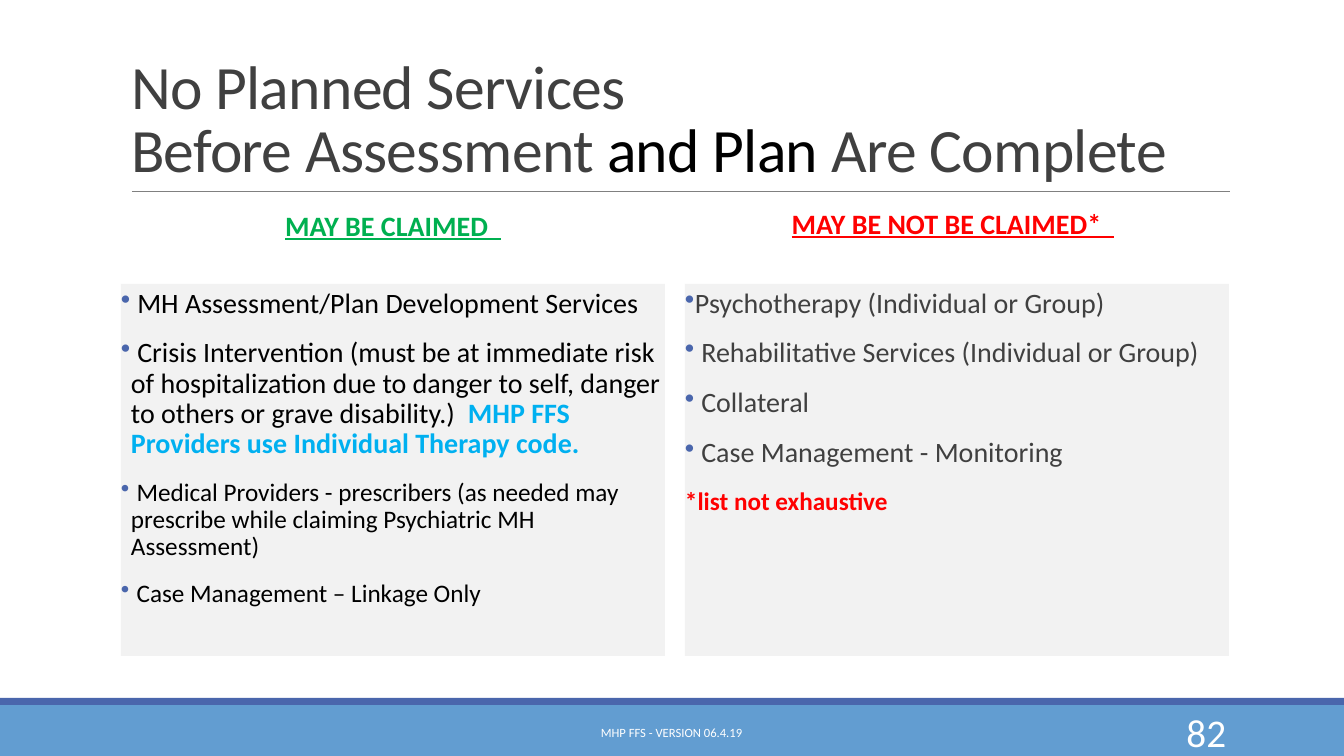
"""Build the slide on services that may be claimed before assessment and plan."""
import pptx
import pptx.dml.color
import pptx.enum.shapes
import pptx.enum.text
import pptx.oxml.ns
import pptx.util
from lxml import etree

ALIGN = pptx.enum.text.PP_ALIGN
ANCHOR = pptx.enum.text.MSO_ANCHOR
EMU_PER_PX = 914400 / 100.8


def px(length):
    """Turn whole pixels into EMU."""
    return pptx.util.Emu(round(length * EMU_PER_PX))


def color(value):
    """Turn a hex string into a colour."""
    return pptx.dml.color.RGBColor.from_string(value)


def add_text(paragraph, text, size=20, fill="000000", bold=False, underline=False, spacing=None):
    """Add formatted text to a paragraph, breaking lines at newlines."""
    for index, line in enumerate(text.split("\n")):
        if index:
            paragraph.add_line_break()
        run = paragraph.add_run()
        run.text = line
        run.font.name = "Calibri"
        run.font.size = pptx.util.Pt(size)
        run.font.color.rgb = color(fill)
        run.font.bold = bold
        run.font.underline = underline
        if spacing is not None:
            run.font._element.set("spc", str(spacing))


class SlideBuilder:
    """Hold the style and the current slide."""

    accent = "4A66AC"
    band = "629DD1"
    panel = "F2F2F2"
    muted = "404040"

    def __init__(self, presentation):
        """Add a title-only slide."""
        self.slide = presentation.slides.add_slide(presentation.slide_layouts[5])

    def rectangle(self, left, top, width, height, fill):
        """Add a plain filled rectangle."""
        shape = self.slide.shapes.add_shape(
            pptx.enum.shapes.MSO_SHAPE.RECTANGLE, px(left), px(top), px(width), px(height))
        shape.shadow.inherit = False
        shape.fill.solid()
        shape.fill.fore_color.rgb = color(fill)
        shape.line.fill.background()
        return shape

    def rule(self, left, right, top):
        """Add a thin horizontal line."""
        line = self.slide.shapes.add_connector(
            pptx.enum.shapes.MSO_CONNECTOR.STRAIGHT, px(left), px(top), px(right), px(top))
        line.line.color.rgb = color("808080")
        line.line.width = pptx.util.Pt(0.5)
        etree.SubElement(line._element.spPr, pptx.oxml.ns.qn("a:effectLst"))

    def title(self, left, top, width, height, parts):
        """Place the title and fill it with coloured parts."""
        title = self.slide.shapes.title
        title.left, title.top, title.width, title.height = map(px, (left, top, width, height))
        frame = title.text_frame
        frame.auto_size = pptx.enum.text.MSO_AUTO_SIZE.NONE
        frame.vertical_anchor = ANCHOR.BOTTOM
        paragraph = frame.paragraphs[0]
        paragraph.alignment = ALIGN.LEFT
        paragraph.line_spacing = 0.85
        for text, fill in parts:
            add_text(paragraph, text, size=44, fill=fill, spacing=-50)

    def label(self, left, top, width, height, text, align=ALIGN.CENTER,
              anchor=ANCHOR.MIDDLE, inset=5, line_spacing=1.0, **text_format):
        """Add a one-line text box."""
        frame = self.slide.shapes.add_textbox(px(left), px(top), px(width), px(height)).text_frame
        frame.word_wrap = True
        frame.vertical_anchor = anchor
        frame.margin_top = px(inset)
        paragraph = frame.paragraphs[0]
        paragraph.alignment = align
        paragraph.line_spacing = line_spacing
        add_text(paragraph, text, **text_format)

    def heading(self, left, top, text, fill):
        """Add an underlined column heading."""
        self.label(left, top, 544, 82, text, anchor=ANCHOR.TOP, inset=8, line_spacing=0.9,
                   fill=fill, bold=True, underline=True)

    def bullet(self, paragraph):
        """Give a paragraph a hanging accent bullet."""
        properties = paragraph._p.get_or_add_pPr()
        properties.set("marL", str(px(10)))
        properties.set("indent", str(px(-10)))
        bullet_color = etree.SubElement(properties, pptx.oxml.ns.qn("a:buClr"))
        etree.SubElement(bullet_color, pptx.oxml.ns.qn("a:srgbClr"), val=self.accent)
        etree.SubElement(properties, pptx.oxml.ns.qn("a:buChar"), char="•")

    def list_panel(self, left, items):
        """Add a shaded panel of items, each a bullet flag and its runs."""
        frame = self.rectangle(left, 284, 544, 372, self.panel).text_frame
        frame.word_wrap = True
        frame.vertical_anchor = ANCHOR.TOP
        frame.margin_left = frame.margin_right = 0
        frame.margin_top = frame.margin_bottom = px(5)
        for index, (bulleted, runs) in enumerate(items):
            paragraph = frame.add_paragraph() if index else frame.paragraphs[0]
            paragraph.alignment = ALIGN.LEFT
            paragraph.line_spacing = 0.9
            paragraph.space_before = pptx.util.Pt(12)
            paragraph.space_after = pptx.util.Pt(2)
            if bulleted:
                self.bullet(paragraph)
            for text, text_format in runs:
                add_text(paragraph, text, **text_format)


def main():
    """Build and save the slide."""
    presentation = pptx.Presentation()
    presentation.slide_width = px(1344)
    presentation.slide_height = px(756)
    builder = SlideBuilder(presentation)
    muted = {"fill": builder.muted}
    small = {"size": 18}

    builder.rectangle(0, 705, 1344, 51, builder.band)
    builder.rectangle(0, 698, 1344, 7, builder.accent)
    builder.rule(132, 1230, 191)
    builder.title(121, 30, 1109, 160, [
        ("No Planned Services \nBefore Assessment ", builder.muted),
        ("and Plan ", "000000"),
        ("Are Complete", builder.muted),
    ])
    builder.heading(121, 204, "MAY BE CLAIMED  ", "00B050")
    builder.heading(681, 202, "MAY BE NOT BE CLAIMED*  ", "FF0000")
    builder.list_panel(121, [
        (True, [(" MH Assessment/Plan Development Services", {})]),
        (True, [
            (" Crisis Intervention (must be at immediate risk of hospitalization due to "
             "danger to self, danger to others or grave disability.)  ", {}),
            ("MHP FFS Providers use Individual Therapy code.", {"fill": "00B0F0", "bold": True}),
        ]),
        (True, [(" Medical Providers - prescribers (as needed may prescribe while claiming "
                 "Psychiatric MH Assessment)", small)]),
        (True, [(" Case Management – Linkage Only", small)]),
    ])
    builder.list_panel(685, [
        (True, [("Psychotherapy (Individual or Group)", muted)]),
        (True, [(" Rehabilitative Services (Individual or Group)", muted)]),
        (True, [(" Collateral", muted)]),
        (True, [(" Case Management - Monitoring", muted)]),
        (False, [("*list not exhaustive", {"size": 18, "fill": "FF0000", "bold": True})]),
    ])
    builder.label(406, 712, 531, 40, "MHP FFS - VERSION 06.4.19", size=9, fill="FFFFFF")
    builder.label(1092, 712, 144, 40, "82", align=ALIGN.RIGHT, size=28, fill="FFFFFF")
    presentation.save("out.pptx")


if __name__ == "__main__":
    main()
